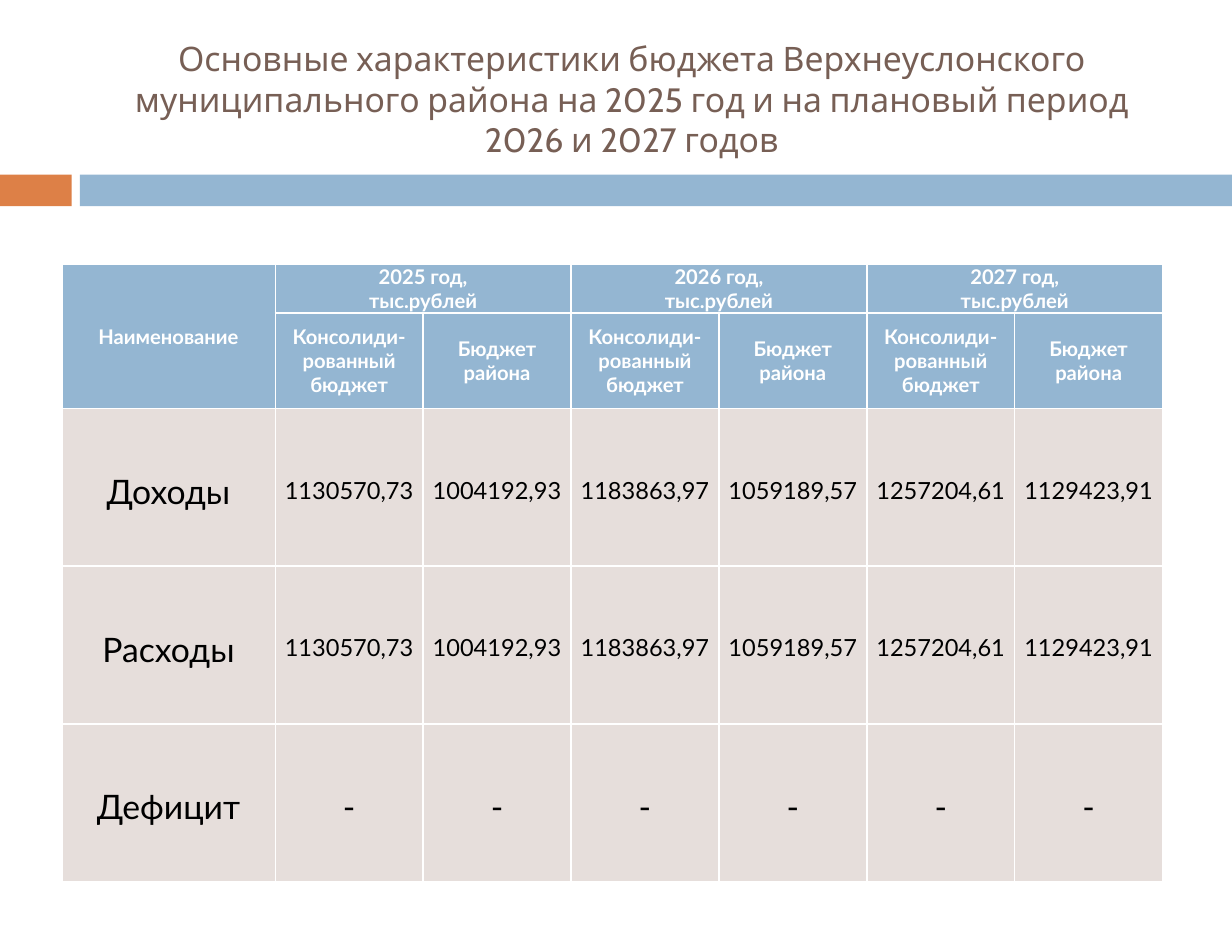
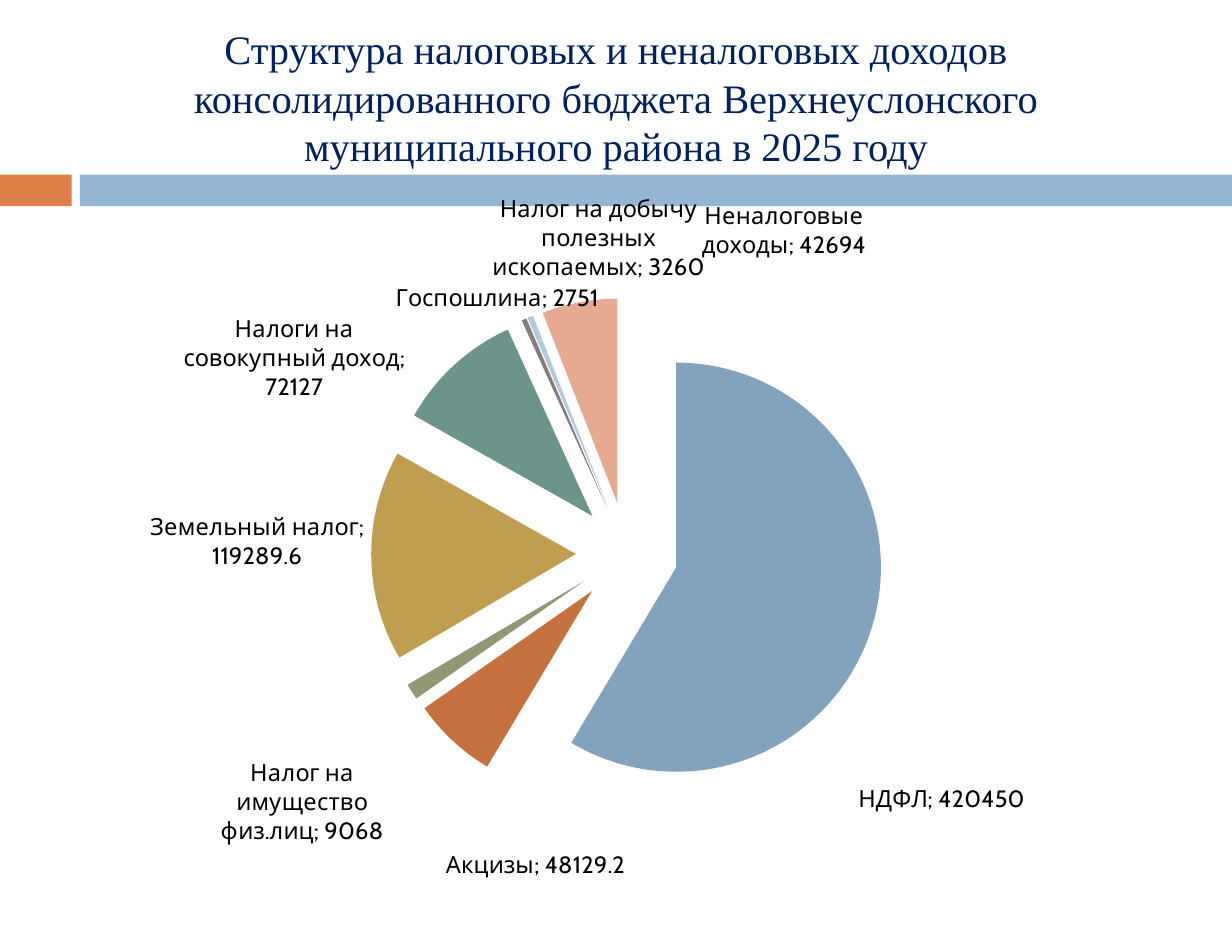
import pptx
import pptx.chart.data
import pptx.dml.color
import pptx.enum.chart
import pptx.enum.shapes
import pptx.enum.text
import pptx.oxml
import pptx.oxml.ns
import pptx.util

Inches = pptx.util.Inches
Pt = pptx.util.Pt
RGBColor = pptx.dml.color.RGBColor
PP_ALIGN = pptx.enum.text.PP_ALIGN
MIDDLE = pptx.enum.text.MSO_ANCHOR.MIDDLE

ORANGE = RGBColor(0xDD, 0x80, 0x47)
BLUE = RGBColor(0x94, 0xB6, 0xD2)
BROWN = RGBColor(0x77, 0x5F, 0x55)
NAVY = RGBColor(0x00, 0x20, 0x60)
PALE = RGBColor(0xE6, 0xDE, 0xDB)
WHITE = RGBColor(0xFF, 0xFF, 0xFF)
BLACK = RGBColor(0x00, 0x00, 0x00)

BANDS = [((0, 1.44, 0.59, 0.26), ORANGE), ((0.66, 1.44, 9.5, 0.26), BLUE)]

HEADER = {"size": Pt(12), "bold": True, "name": "Lato"}
LARGE = {"size": Pt(20), "bold": False, "name": "Lato"}
NUMBER = {"size": Pt(14), "bold": False, "name": "Lato"}

YEARS = [2025, 2026, 2027]
AMOUNTS = ["1130570,73", "1004192,93", "1183863,97",
           "1059189,57", "1257204,61", "1129423,91"]
BUDGET_ROWS = [("Доходы", AMOUNTS, NUMBER), ("Расходы", AMOUNTS, NUMBER),
               ("Дефицит", ["-"] * 6, LARGE)]

# name, value, slice colour, label shift as a share of the chart's size
INCOME = [
    ("НДФЛ", 420450, RGBColor(0x83, 0xA2, 0xBC), (-0.02, 0.23)),
    ("Акцизы", 48129.2, RGBColor(0xC5, 0x72, 0x40), (0.16, 0.15)),
    ("Налог на имущество физ.лиц", 9068, RGBColor(0x92, 0x98, 0x73), (-0.02, 0.09)),
    ("Земельный налог", 119289.6, RGBColor(0xBF, 0x9E, 0x51), (0, -0.02)),
    ("Налоги на совокупный доход", 72127, RGBColor(0x6D, 0x94, 0x8B), (-0.04, 0.06)),
    ("Госпошлина", 2751, RGBColor(0x85, 0x7C, 0x7C), (0.07, 0)),
    ("Налог на добычу полезных ископаемых", 3260, RGBColor(0xB4, 0xCB, 0xDF),
     (0.16, -0.04)),
    ("Неналоговые доходы", 42694, RGBColor(0xE6, 0xAA, 0x92), (0.26, -0.05)),
]
PLOT_BOX = {"x": 0.09, "y": 0.15, "w": 0.84, "h": 0.73}


def set_font(font, color, values):
    for name, value in values.items():
        setattr(font, name, value)
    font.color.rgb = color


def add_bands(slide, layout):
    """Draw the bands and move them to the layout that all slides share."""
    for box, color in BANDS:
        sp = slide.shapes.add_shape(pptx.enum.shapes.MSO_SHAPE.RECTANGLE,
                                    *map(Inches, box))
        sp.shadow.inherit = False
        sp.fill.solid()
        sp.fill.fore_color.rgb = color
        sp.line.fill.background()
        layout.shapes.element.append(sp.element)


def set_title(slide, box, text, color, values):
    sp = slide.shapes.title
    sp.left, sp.top, sp.width, sp.height = map(Inches, box)
    tf = sp.text_frame
    tf.text = text
    tf.word_wrap = True
    tf.auto_size = pptx.enum.text.MSO_AUTO_SIZE.NONE
    tf.vertical_anchor = MIDDLE
    p = tf.paragraphs[0]
    p.alignment = PP_ALIGN.CENTER
    set_font(p.runs[0].font, color, values)


def add_borders(cell):
    tc_pr = cell._tc.get_or_add_tcPr()
    for i, side in enumerate("LRTB"):
        tc_pr.insert(i, pptx.oxml.parse_xml(
            f'<a:ln{side} {pptx.oxml.ns.nsdecls("a")} w="{Pt(1)}"><a:solidFill>'
            f'<a:srgbClr val="{WHITE}"/></a:solidFill></a:ln{side}>'))


def fill_cell(cell, text, values, header=False, margin=0.06):
    cell.text = text
    cell.vertical_anchor = MIDDLE
    cell.margin_left = cell.margin_right = Inches(margin)
    cell.margin_top = cell.margin_bottom = 0
    cell.fill.solid()
    cell.fill.fore_color.rgb = BLUE if header else PALE
    for p in cell.text_frame.paragraphs:
        p.alignment = PP_ALIGN.CENTER
        p.line_spacing = 1.0 if header else 1.2
        for r in p.runs:
            set_font(r.font, WHITE if header else BLACK, values)
    add_borders(cell)


def add_budget_table(slide, box):
    table = slide.shapes.add_table(5, 7, *map(Inches, box)).table
    table.first_row = table.horz_banding = False
    for i, column in enumerate(table.columns):
        column.width = Inches(1.22 if i else 1.76)
    for row, height in zip(table.rows, [0.37, 0.79, 1.3, 1.3, 1.3]):
        row.height = Inches(height)

    fill_cell(table.cell(0, 0), "Наименование", HEADER, True)
    fill_cell(table.cell(1, 0), "", HEADER, True)
    table.cell(0, 0).merge(table.cell(1, 0))
    for i, year in enumerate(YEARS):
        col = 1 + 2 * i
        fill_cell(table.cell(0, col), f"{year} год,\nтыс.рублей", HEADER, True, 0.01)
        fill_cell(table.cell(0, col + 1), "", HEADER, True, 0.01)
        table.cell(0, col).merge(table.cell(0, col + 1))
        for j, text in enumerate(["Консолиди-рованный бюджет", "Бюджет района"]):
            fill_cell(table.cell(1, col + j), text, HEADER, True, 0.01)

    for row, (name, amounts, values) in enumerate(BUDGET_ROWS, 2):
        fill_cell(table.cell(row, 0), name, LARGE)
        for col, amount in enumerate(amounts, 1):
            fill_cell(table.cell(row, col), amount, values)


def manual_layout(values, inner=False):
    target = '<c:layoutTarget val="inner"/>' if inner else ""
    if inner:
        target += '<c:xMode val="edge"/><c:yMode val="edge"/>'
    parts = "".join(f'<c:{k} val="{v}"/>' for k, v in values.items())
    return pptx.oxml.parse_xml(
        f'<c:layout {pptx.oxml.ns.nsdecls("c")}><c:manualLayout>{target}{parts}'
        '</c:manualLayout></c:layout>')


def add_income_pie(slide, box):
    names, amounts, colors, shifts = zip(*INCOME)
    data = pptx.chart.data.CategoryChartData()
    data.categories = names
    data.add_series("Series 1", amounts)
    chart = slide.shapes.add_chart(pptx.enum.chart.XL_CHART_TYPE.PIE,
                                   *map(Inches, box), data).chart
    chart.has_legend = False
    chart.has_title = False
    label_font = {"size": Pt(14), "name": "Cabin"}
    set_font(chart.font, BLACK, label_font)

    plot = chart.plots[0]
    plot.vary_by_categories = True
    labels = plot.series[0].data_labels
    labels.show_value = labels.show_category_name = True
    set_font(labels.font, BLACK, label_font)
    for i, color in enumerate(colors):
        point = plot.series[0].points[i]
        point.format.fill.solid()
        point.format.fill.fore_color.rgb = color
        point.format.line.fill.background()
        set_font(point.data_label.font, BLACK, label_font)
        point.data_label.position = pptx.enum.chart.XL_LABEL_POSITION.OUTSIDE_END

    root = chart.element
    for label, (x, y) in zip(root.xpath(".//c:ser/c:dLbls/c:dLbl"), shifts):
        label.xpath("c:idx")[0].addnext(manual_layout({"x": x, "y": y}))
        label.xpath("c:showCatName")[0].set("val", "1")
    for leader in root.xpath(".//c:showLeaderLines"):
        leader.set("val", "0")
    root.xpath(".//c:ser/c:tx")[0].addnext(pptx.oxml.parse_xml(
        f'<c:explosion {pptx.oxml.ns.nsdecls("c")} val="25"/>'))
    area = root.xpath(".//c:plotArea")[0]
    for layout in area.xpath("c:layout"):
        area.remove(layout)
    area.insert(0, manual_layout(PLOT_BOX, inner=True))


def main():
    prs = pptx.Presentation()
    prs.slide_width, prs.slide_height = Inches(10.16), Inches(7.72)
    layout = prs.slide_layouts[5]

    slide = prs.slides.add_slide(layout)
    add_bands(slide, layout)
    set_title(slide, (0.68, 0.26, 9.06, 1.11),
              "Основные характеристики бюджета Верхнеуслонского муниципального "
              "района на 2025 год и на плановый период 2026 и 2027 годов",
              BROWN, {"size": Pt(20), "name": "Cabin"})
    add_budget_table(slide, (0.51, 2.18, 9.06, 5.1))

    slide = prs.slides.add_slide(layout)
    set_title(slide, (0.51, 0.08, 9.14, 1.44),
              "Структура налоговых и неналоговых доходов консолидированного "
              "бюджета Верхнеуслонского муниципального района в 2025 году",
              NAVY, {"size": Pt(24), "name": "Times New Roman"})
    add_income_pie(slide, (0.51, 1.59, 9.14, 5.78))

    prs.save("out.pptx")


if __name__ == "__main__":
    main()
